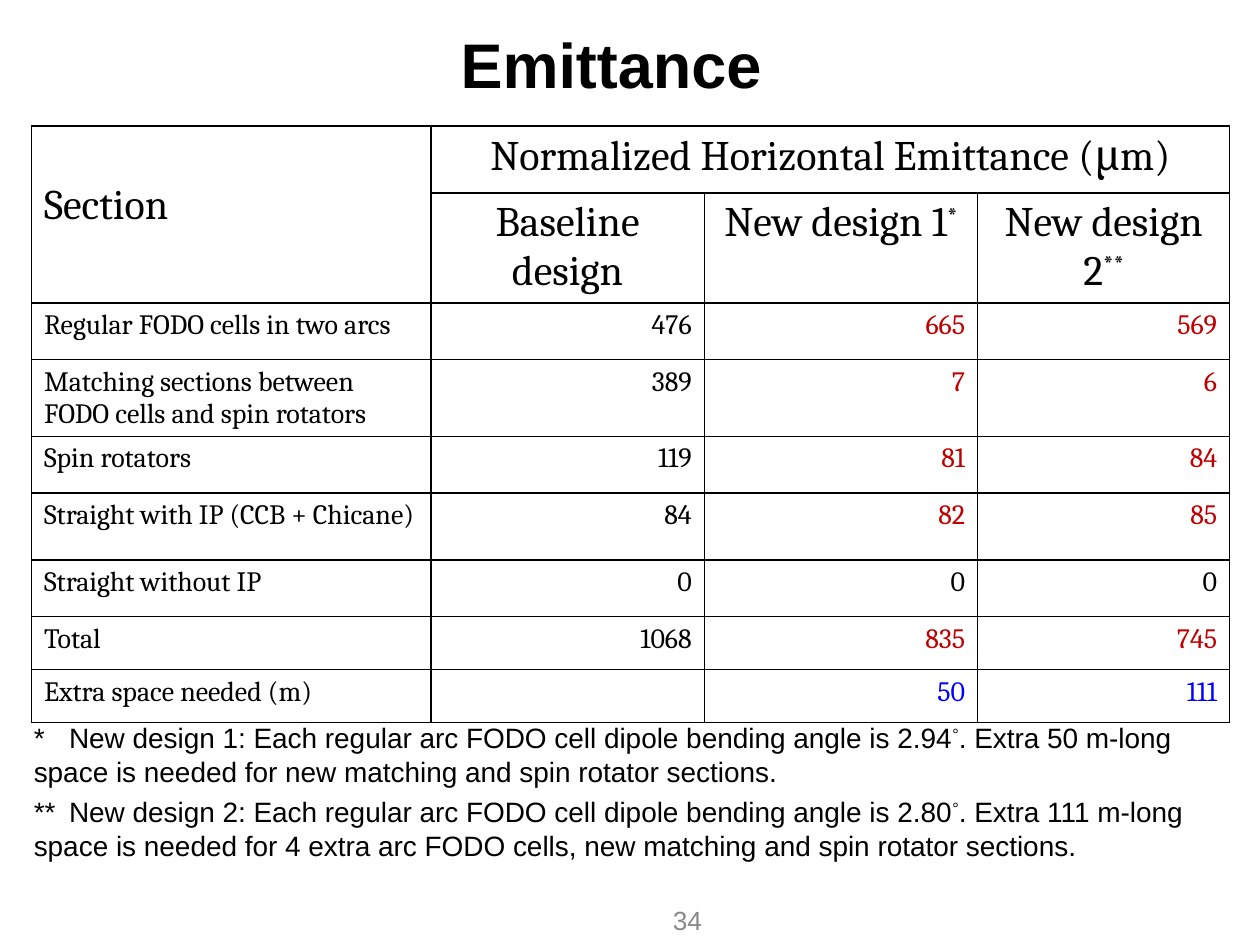
from dataclasses import dataclass

from lxml import etree
from pptx import Presentation
from pptx.dml.color import RGBColor
from pptx.enum.text import MSO_ANCHOR, MSO_AUTO_SIZE, PP_ALIGN
from pptx.oxml.ns import qn
from pptx.util import Inches, Pt

LEFT, MID, RIGHT = PP_ALIGN.LEFT, PP_ALIGN.CENTER, PP_ALIGN.RIGHT
TOP, CENTER = MSO_ANCHOR.TOP, MSO_ANCHOR.MIDDLE
UNIT = 0.25  # grid step in inches: 40 columns by 30 rows


@dataclass(frozen=True)
class Theme:
    sans: str = "Arial"
    serif: str = "Cambria"
    ink: str = "000000"
    red: str = "C00000"
    blue: str = "0000FF"
    gray: str = "898989"
    title: int = 36
    head: int = 24
    body: int = 16
    page: int = 15


@dataclass(frozen=True)
class Box:
    col: float
    row: float
    wide: float
    high: float

    def lengths(self) -> list:
        return [step(n) for n in (self.col, self.row, self.wide, self.high)]


@dataclass(frozen=True)
class Style:
    name: str
    size: int
    color: str
    bold: bool = False
    align: PP_ALIGN = LEFT


@dataclass(frozen=True)
class Entry:
    label: str
    values: tuple
    color: str  # of the two new designs


T = Theme()
HEAD = Style(T.serif, T.head, T.ink, align=MID)
WIDTHS = (12.68, 8.68, 8.68, 8)
HEIGHTS = (2.12, 2.12, 1.8, 2.12, 1.8, 2.12, 1.8, 1.68, 1.68)
ENTRIES = (
    Entry("Regular FODO cells in two arcs", ("476", "665", "569"), T.red),
    Entry("Matching sections between FODO cells and spin rotators", ("389", "7", "6"), T.red),
    Entry("Spin rotators", ("119", "81", "84"), T.red),
    Entry("Straight with IP (CCB + Chicane)", ("84", "82", "85"), T.red),
    Entry("Straight without IP", ("0", "0", "0"), T.ink),
    Entry("Total", ("1068", "835", "745"), T.red),
    Entry("Extra space needed (m)", ("", "50", "111"), T.blue),
)
NOTES = (
    "*\tNew design 1: Each regular arc FODO cell dipole bending angle is 2.94^°^. "
    "Extra 50 m-long space is needed for new matching and spin rotator sections.",
    "**\tNew design 2: Each regular arc FODO cell dipole bending angle is 2.80^°^. "
    "Extra 111 m-long space is needed for 4 extra arc FODO cells, "
    "new matching and spin rotator sections.",
)


def step(count: float) -> int:
    return Inches(count * UNIT)


def apply(item, values: dict) -> None:
    for name, value in values.items():
        setattr(item, name, value)


def write(para, text: str, style: Style) -> None:
    """Fill a paragraph; text between carets is superscript."""
    para.alignment = style.align
    for spot, part in enumerate(text.split("^")):
        if not part:
            continue
        run = para.add_run()
        run.text = part
        apply(run.font, {"name": style.name, "size": Pt(style.size), "bold": style.bold})
        run.font.color.rgb = RGBColor.from_string(style.color)
        if spot % 2:
            run.font._element.set("baseline", "30000")


def frame(shape, anchor: MSO_ANCHOR):
    apply(shape.text_frame, {"word_wrap": True, "auto_size": MSO_AUTO_SIZE.NONE,
                             "vertical_anchor": anchor})
    return shape.text_frame


def rule(cell) -> None:
    """Clear the fill and draw thin lines on all four sides."""
    cell.fill.background()
    props = cell._tc.get_or_add_tcPr()
    for spot, side in enumerate(("lnL", "lnR", "lnT", "lnB")):
        line = etree.Element(qn(f"a:{side}"), w=str(Pt(1)))
        fill = etree.SubElement(line, qn("a:solidFill"))
        etree.SubElement(fill, qn("a:srgbClr"), val=T.ink)
        props.insert(spot, line)


def draw_title(slide) -> None:
    title = slide.shapes.title
    spots = Box(3, 0, 34, 4).lengths()
    apply(title, dict(zip(("left", "top", "width", "height"), spots)))
    text = frame(title, CENTER)
    text.margin_right = Inches(0.4)
    write(text.paragraphs[0], "Emittance", Style(T.sans, T.title, T.ink, True, MID))


def draw_table(slide) -> None:
    spots = Box(1, 4, 38, 18).lengths()
    holder = slide.shapes.add_table(len(HEIGHTS), len(WIDTHS), *spots)
    table = holder.table
    apply(table, {"first_row": False, "horz_banding": False})
    for col, width in zip(table.columns, WIDTHS):
        col.width = step(width)
    for row, height in zip(table.rows, HEIGHTS):
        row.height = step(height)
    holder.height = spots[3]
    for cell in table.iter_cells():
        rule(cell)

    # Header cells
    first, wide = table.cell(0, 0), table.cell(0, 1)
    first.merge(table.cell(1, 0))
    wide.merge(table.cell(0, 3))
    first.margin_top = Inches(0.44)
    write(first.text_frame.paragraphs[0], "Section", Style(T.serif, T.head, T.ink))
    write(wide.text_frame.paragraphs[0], "Normalized Horizontal Emittance (μm)", HEAD)
    names = ("Baseline design", "New design 1^*", "New design 2^**")
    for col, name in enumerate(names, 1):
        write(table.cell(1, col).text_frame.paragraphs[0], name, HEAD)

    # Values by section
    for row, entry in enumerate(ENTRIES, 2):
        for col, text in enumerate((entry.label, *entry.values)):
            color = entry.color if col > 1 else T.ink
            style = Style(T.serif, T.body, color, align=RIGHT if col else LEFT)
            write(table.cell(row, col).text_frame.paragraphs[0], text, style)


def draw_notes(slide) -> None:
    text = frame(slide.shapes.add_textbox(*Box(0.68, 22.68, 38, 5).lengths()), TOP)
    for spot, note in enumerate(NOTES):
        para = text.add_paragraph() if spot else text.paragraphs[0]
        tabs = etree.SubElement(para._p.get_or_add_pPr(), qn("a:tabLst"))
        etree.SubElement(tabs, qn("a:tab"), pos=str(Inches(0.28)), algn="l")
        if spot:
            para.space_before = Pt(4)
        write(para, note, Style(T.sans, T.body, T.ink))


def draw_page(slide) -> None:
    text = frame(slide.shapes.add_textbox(*Box(19.68, 28.4, 3, 1.6).lengths()), CENTER)
    write(text.paragraphs[0], "34", Style(T.sans, T.page, T.gray, align=RIGHT))


def main() -> None:
    deck = Presentation()
    apply(deck, {"slide_width": step(40), "slide_height": step(30)})
    slide = deck.slides.add_slide(deck.slide_layouts[5])
    for draw in (draw_title, draw_table, draw_notes, draw_page):
        draw(slide)
    deck.save("out.pptx")


if __name__ == "__main__":
    main()
